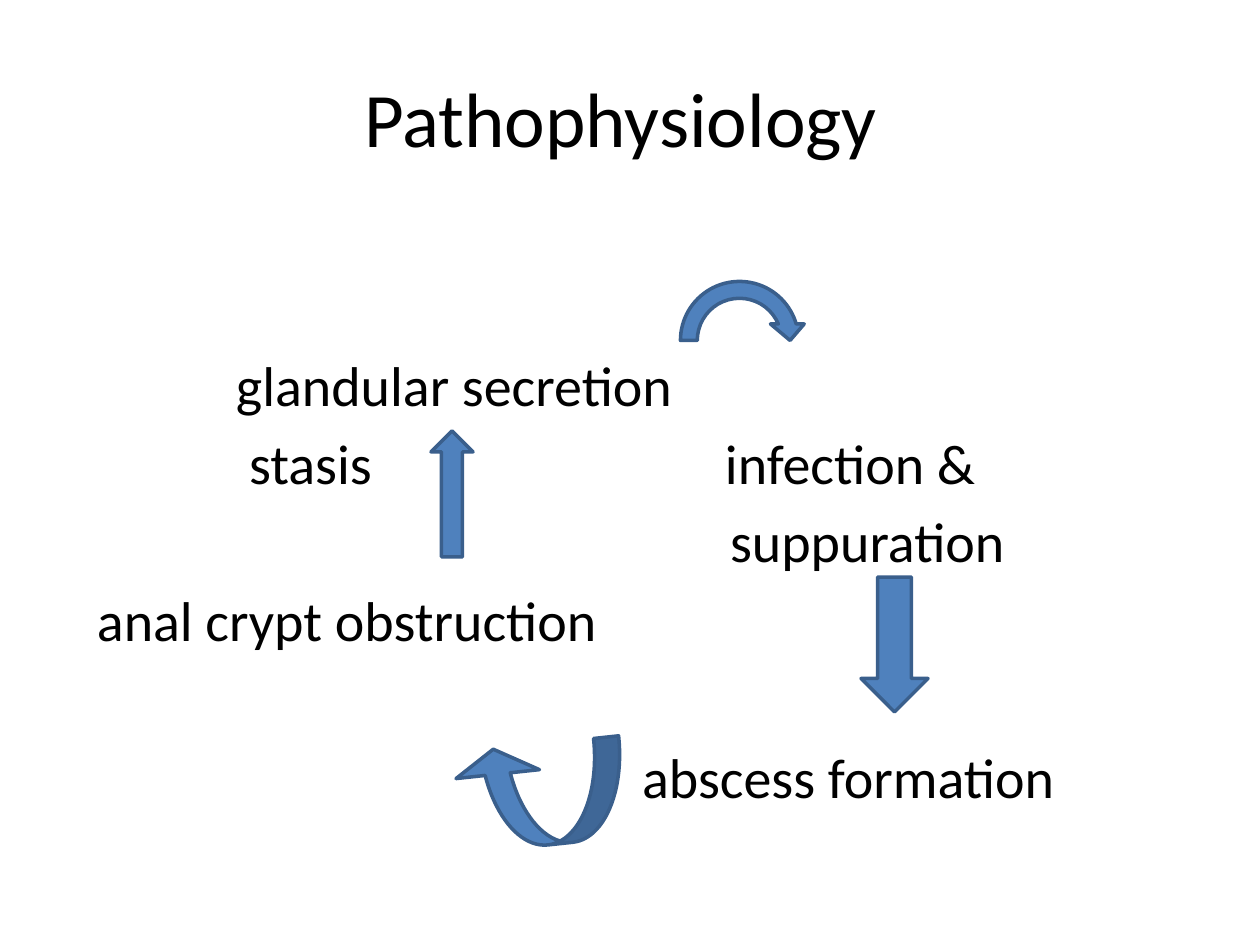
from dataclasses import dataclass
from pptx import Presentation
from pptx.dml.color import RGBColor as Rgb
from pptx.enum.shapes import MSO_SHAPE as Kind
from pptx.enum.text import MSO_ANCHOR as Anchor, PP_ALIGN as Align
from pptx.util import Pt

SCALE = 914400 / 126  # EMU per px


def emu(px):
    return round(px * SCALE)


@dataclass(frozen=True)
class Theme:
    font: str = "Calibri"
    ink: str = "000000"
    fill: str = "4F81BD"
    edge: str = "3A5F8C"
    paper: str = "FFFFFF"
    head: int = 44
    body: int = 32
    line: int = 2


def write(frame, text, *, theme, size, align=Align.LEFT, anchor=Anchor.TOP):
    frame.word_wrap = True
    frame.vertical_anchor = anchor
    frame.margin_left = frame.margin_right = 0
    frame.margin_top = frame.margin_bottom = 0
    par = frame.paragraphs[0]
    par.alignment = align
    run = par.add_run()
    run.text = text
    run.font.name = theme.font
    run.font.size = Pt(size)
    run.font.color.rgb = Rgb.from_string(theme.ink)


class Page:
    def __init__(self, slide, theme):
        self.slide, self.theme = slide, theme
        back = slide.background.fill
        back.solid()
        back.fore_color.rgb = Rgb.from_string(theme.paper)

    def text(self, text, box, **form):
        shape = self.slide.shapes.add_textbox(*map(emu, box))
        write(shape.text_frame, text, theme=self.theme, **form)

    def arrow(self, kind, box, turn=0, adjust=()):
        shape = self.slide.shapes.add_shape(kind, *map(emu, box))
        shape.shadow.inherit = False
        shape.rotation = turn
        for i, value in enumerate(adjust):
            shape.adjustments[i] = value
        shape.fill.solid()
        shape.fill.fore_color.rgb = Rgb.from_string(self.theme.fill)
        shape.line.color.rgb = Rgb.from_string(self.theme.edge)
        shape.line.width = Pt(self.theme.line)


def main():
    deck = Presentation()
    deck.slide_width, deck.slide_height = emu(1260), emu(945)
    theme = Theme()
    page = Page(deck.slides.add_slide(deck.slide_layouts[6]), theme)

    # Title
    page.text("Pathophysiology", (54, 38, 1134, 158), size=theme.head,
              align=Align.CENTER, anchor=Anchor.MIDDLE)

    # Stages of the cycle: text, left, row, width
    top, pitch = 350, 78.4
    stages = [
        ("glandular secretion", 236, 0, 480),
        ("stasis", 249, 1, 160),
        ("infection &", 725, 1, 300),
        ("suppuration", 730, 2, 320),
        ("anal crypt obstruction", 97, 3, 540),
        ("abscess formation", 642, 5, 460),
    ]
    for text, left, row, width in stages:
        page.text(text, (left, round(top + pitch * row), width, 68),
                  size=theme.body)

    # Arrows between the stages
    page.arrow(Kind.DOWN_ARROW, (861, 577, 67, 135))
    page.arrow(Kind.UP_ARROW, (431, 431, 42, 126))
    page.arrow(Kind.CIRCULAR_ARROW, (672, 273, 135, 135))
    page.arrow(Kind.CURVED_LEFT_ARROW, (490, 711, 101, 168),
               turn=83.9, adjust=(0.25, 0.83, 0.25))

    deck.save("out.pptx")


if __name__ == "__main__":
    main()
